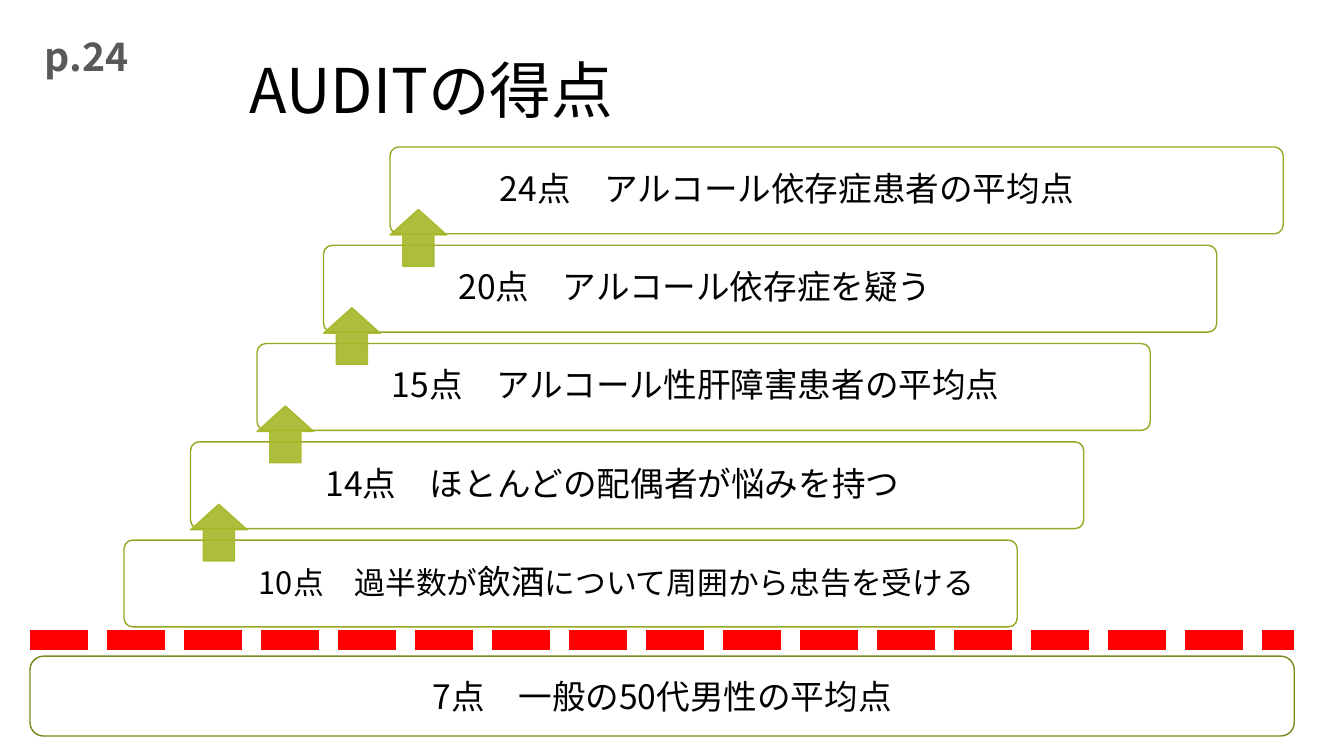
from lxml.etree import SubElement
from pptx import Presentation
from pptx.dml.color import RGBColor
from pptx.enum.dml import MSO_LINE
from pptx.enum.shapes import MSO_CONNECTOR, MSO_SHAPE
from pptx.enum.text import MSO_ANCHOR, PP_ALIGN
from pptx.oxml.ns import qn
from pptx.util import Pt

FONT = "Noto Sans CJK JP"
BLACK = RGBColor(0x00, 0x00, 0x00)
GRAY = RGBColor(0x59, 0x59, 0x59)
WHITE = RGBColor(0xFF, 0xFF, 0xFF)
RED = RGBColor(0xFF, 0x00, 0x00)
STEP_EDGE = RGBColor(0x97, 0xA6, 0x23)
ARROW_GREEN = RGBColor(0xA6, 0xB7, 0x27)
BASE_EDGE = RGBColor(0x7B, 0x87, 0x1D)

STEPS = [
    [("24点　アルコール依存症患者の平均点", 24)],
    [("20点　アルコール依存症を疑う", 24)],
    [("15点　アルコール性肝障害患者の平均点", 24)],
    [("14点　ほとんどの配偶者が悩みを持つ", 24)],
    [("10点　過半数が", 22), ("飲酒", 24), ("について周囲から忠告を受ける", 22)],
]
STEP_SHIFT, STEP_PITCH = 47.5, 70.2
CARD_WIDTH, CARD_HEIGHT = 638, 62
ARROW_SIZE, ARROW_DROP = 40.5, 44.6


def write(frame, runs, color=BLACK, bold=False, align=PP_ALIGN.LEFT,
          anchor=MSO_ANCHOR.MIDDLE, spacing=1.0):
    """Fill a text frame with one paragraph of (text, size) runs."""
    for name, value in {"word_wrap": True, "vertical_anchor": anchor}.items():
        setattr(frame, name, value)
    paragraph = frame.paragraphs[0]
    for name, value in {"alignment": align, "line_spacing": spacing}.items():
        setattr(paragraph, name, value)
    for text, size in runs:
        run = paragraph.add_run()
        run.text = text
        run.font.color.rgb = color
        for name, value in {"name": FONT, "size": Pt(size), "bold": bold}.items():
            setattr(run.font, name, value)
        SubElement(run.font._element, qn("a:ea"), typeface=FONT)


def add_label(slide, box, runs, **style):
    """Add a text box at the given box in points."""
    label = slide.shapes.add_textbox(*map(Pt, box))
    write(label.text_frame, runs, **style)


def add_block(slide, kind, box, fill, edge, adjustments):
    """Add a filled, outlined preset shape without shadow."""
    block = slide.shapes.add_shape(kind, *map(Pt, box))
    block.shadow.inherit = False
    block.fill.solid()
    block.fill.fore_color.rgb = fill
    block.line.color.rgb = edge
    block.line.width = Pt(1)
    for index, value in enumerate(adjustments):
        block.adjustments[index] = value
    return block


def add_step(slide, left, top, runs, indent):
    """Draw one score card with its text indented from the left edge."""
    add_block(slide, MSO_SHAPE.ROUNDED_RECTANGLE,
              (left, top, CARD_WIDTH, CARD_HEIGHT), WHITE, STEP_EDGE, [0.1])
    add_label(slide, (left + indent, top + 1.8, CARD_WIDTH - indent - 2, 58.4),
              runs, spacing=0.9)


def add_arrow(slide, left, top):
    """Draw a slightly transparent arrow pointing up to the next card."""
    arrow = add_block(slide, MSO_SHAPE.UP_ARROW, (left, top, ARROW_SIZE, ARROW_SIZE),
                      ARROW_GREEN, ARROW_GREEN, [0.55, 0.45])
    for color in arrow._element.spPr.iter(qn("a:srgbClr")):
        SubElement(color, qn("a:alpha"), val="90000")


def add_staircase(slide, left, top):
    """Draw the score cards, highest at upper right, and the arrows between them."""
    corners = [(left - i * STEP_SHIFT, top + i * STEP_PITCH) for i in range(len(STEPS))]
    for i, ((x, y), runs) in enumerate(zip(corners, STEPS)):
        add_step(slide, x, y, runs, 89.3 if i else 71.3)
    for x, y in corners[:-1]:
        add_arrow(slide, x, y + ARROW_DROP)


def add_baseline(slide, left, top, width):
    """Draw the general-population bar and the red dashed border above it."""
    bar = add_block(slide, MSO_SHAPE.ROUNDED_RECTANGLE, (left, top + 11.5, width, 57),
                    WHITE, BASE_EDGE, [0.1667])
    write(bar.text_frame, [("7点　一般の50代男性の平均点", 24)], align=PP_ALIGN.CENTER)
    border = slide.shapes.add_connector(
        MSO_CONNECTOR.STRAIGHT, Pt(left), Pt(top), Pt(left + width), Pt(top))
    border.line.color.rgb = RED
    for name, value in {"width": Pt(13.75), "dash_style": MSO_LINE.SQUARE_DOT}.items():
        setattr(border.line, name, value)
    border.line._ln.find(qn("a:prstDash")).set("val", "sysDash")
    SubElement(border._element.spPr, qn("a:effectLst"))


def main():
    """Build the slide and save it."""
    deck = Presentation()
    deck.slide_width, deck.slide_height = Pt(960), Pt(540)
    slide = deck.slides.add_slide(deck.slide_layouts[6])
    add_label(slide, (171.4, 0, 738, 94.3), [("AUDITの得点", 44)],
              anchor=MSO_ANCHOR.BOTTOM, spacing=0.9)
    add_staircase(slide, 278.6, 105)
    add_baseline(slide, 21.5, 457.2, 903)
    add_label(slide, (9.4, 9.4, 105, 61.2), [("p.24", 28)],
              color=GRAY, bold=True, align=PP_ALIGN.CENTER)
    deck.save("out.pptx")


if __name__ == "__main__":
    main()
